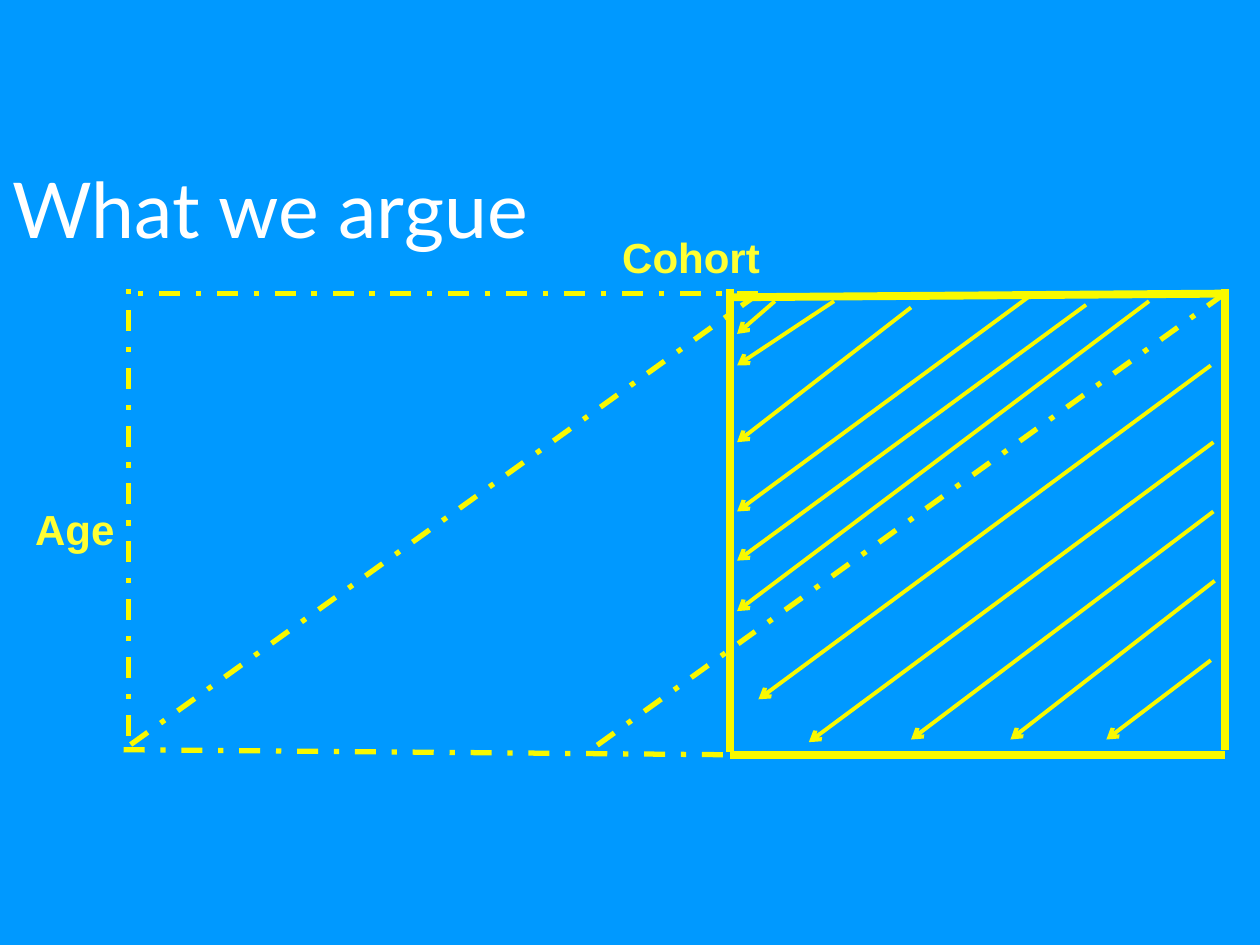
from lxml import etree
from pptx import Presentation
from pptx.dml.color import RGBColor
from pptx.enum.dml import MSO_LINE
from pptx.enum.shapes import MSO_CONNECTOR
from pptx.enum.text import MSO_AUTO_SIZE
from pptx.oxml.ns import qn
from pptx.util import Pt

STRAIGHT = MSO_CONNECTOR.STRAIGHT
DASH = MSO_LINE.DASH_DOT
GROW = MSO_AUTO_SIZE.SHAPE_TO_FIT_TEXT

THEME = {
    "back": RGBColor(0x00, 0x99, 0xFF),
    "line": RGBColor(0xF9, 0xF9, 0x00),
    "title": {"font": "Lato", "size": 44, "color": RGBColor(0xFF, 0xFF, 0xFF), "bold": False},
    "label": {"font": "Arial", "size": 24, "color": RGBColor(0xFF, 0xFF, 0x33), "bold": True},
    "thin": 2.25,
    "dash": 3,
    "thick": 4.5,
}

TEXTS = [
    ("What we argue", "title", (0, 88.6, 720, 60.5), True),
    ("Age", "label", (13, 284.4, 60.5, 36), False),
    ("Cohort", "label", (348.5, 128.9, 93.6, 36), False),
]

LEFT, MID, RIGHT = 70.6, 416.9, 699.8
PEAK, TOP, LOW, BASE = 164.9, 167.8, 428.4, 431.3
BEND, AGE = 433.4, 73.4

DASHES = [
    (BEND, TOP, LEFT, LOW),
    (RIGHT, TOP, 337.7, LOW),
    (LEFT, LOW, MID, BASE),
    (BEND, TOP, LEFT, TOP),
    (AGE, 420.5, AGE, PEAK),
]
FRAME = [
    (RIGHT, BASE, MID, BASE),
    (RIGHT, LOW, RIGHT, PEAK),
    (MID, 169.9, RIGHT, TOP),
    (MID, 429.8, MID, PEAK),
]

EDGE, FLOOR = 421.2, 422.6
TO_EDGE = [
    (442.8, 172.1, 190.8),
    (476.6, 172.1, 208.8),
    (520.6, 175.7, 252.7),
    (587.5, 169.9, 292.3),
    (620.6, 174.2, 320.4),
    (656.6, 172.1, 349.2),
]
TO_FLOOR = [
    (693.4, 292.3, 520.6),
    (694.1, 331.9, 577.4),
    (691.9, 377.3, 632.2),
]
ARROWS = (
    [(x, y, EDGE, end) for x, y, end in TO_EDGE]
    + [(691.9, 208.8, BEND, 399.6), (693.4, 252.7, 462.2, 424.1)]
    + [(x, y, end, FLOOR) for x, y, end in TO_FLOOR]
)


def add_text(slide, words, style, place, wrap):
    look = THEME[style]
    frame = slide.shapes.add_textbox(*map(Pt, place)).text_frame
    frame.word_wrap = wrap
    frame.auto_size = GROW
    run = frame.paragraphs[0].add_run()
    run.text = words
    font = run.font
    font.name, font.size, font.bold = look["font"], Pt(look["size"]), look["bold"]
    font.color.rgb = look["color"]


def add_line(slide, ends, width, dash=None, arrow=False):
    link = slide.shapes.add_connector(STRAIGHT, *map(Pt, ends))
    line = link.line
    line.color.rgb = THEME["line"]
    line.width = Pt(THEME[width])
    if dash:
        line.dash_style = dash
    props = link._element.spPr
    if arrow:
        etree.SubElement(props.find(qn("a:ln")), qn("a:tailEnd"), type="arrow")
    etree.SubElement(props, qn("a:effectLst"))


def main():
    deck = Presentation()
    deck.slide_width, deck.slide_height = Pt(720), Pt(540)
    slide = deck.slides.add_slide(deck.slide_layouts[6])
    fill = slide.background.fill
    fill.solid()
    fill.fore_color.rgb = THEME["back"]
    for item in TEXTS:
        add_text(slide, *item)
    for ends in DASHES:
        add_line(slide, ends, "dash", dash=DASH)
    for ends in ARROWS:
        add_line(slide, ends, "thin", arrow=True)
    for ends in FRAME:
        add_line(slide, ends, "thick")
    deck.save("out.pptx")


if __name__ == "__main__":
    main()
